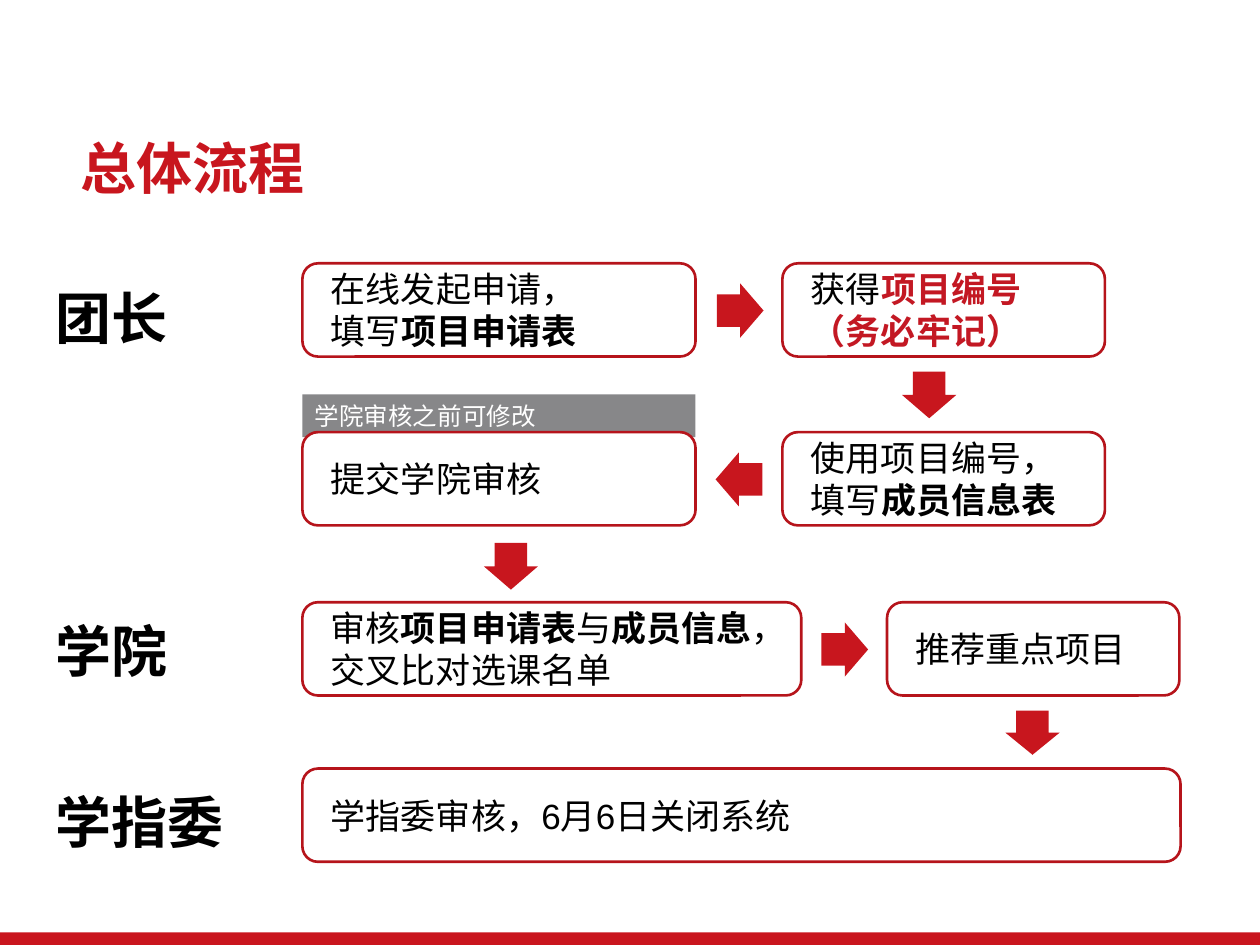
from lxml import etree
from pptx import Presentation
from pptx.dml.color import RGBColor
from pptx.enum.shapes import MSO_SHAPE
from pptx.enum.text import MSO_ANCHOR, PP_ALIGN
from pptx.oxml.ns import qn
from pptx.util import Inches, Pt

RECTANGLE = MSO_SHAPE.RECTANGLE
ROUNDED = MSO_SHAPE.ROUNDED_RECTANGLE
RIGHT = MSO_SHAPE.RIGHT_ARROW
LEFT = MSO_SHAPE.LEFT_ARROW
DOWN = MSO_SHAPE.DOWN_ARROW
TOP = MSO_ANCHOR.TOP
MIDDLE = MSO_ANCHOR.MIDDLE
ALIGN_LEFT = PP_ALIGN.LEFT

WHITE = RGBColor(0xFF, 0xFF, 0xFF)
BLACK = RGBColor(0x00, 0x00, 0x00)
GRAY = RGBColor(0x87, 0x87, 0x89)
BAR_RED = RGBColor(0xC9, 0x15, 0x1E)
RED = RGBColor(0xC8, 0x16, 0x1E)
BORDER_RED = RGBColor(0xB6, 0x14, 0x1B)
ACCENT_RED = RGBColor(0xC3, 0x18, 0x23)

BODY_FONT = "Arial"
TITLE_FONT = "Noto Sans CJK SC"

COLUMN_LEFT = 2.4
SECOND_LEFT = 6.21
BOX_HEIGHT = 0.74
ROWS = (2.09, 3.43, 4.78, 6.1)
ARROW_LENGTH = 0.37
ARROW_BREADTH = 0.43


def write_runs(paragraph, runs, size, font_name=BODY_FONT):
    paragraph.alignment = ALIGN_LEFT
    for text, bold, color in runs:
        run = paragraph.add_run()
        run.text = text
        run.font.size = Pt(size)
        run.font.bold = bold
        run.font.name = font_name
        run.font.color.rgb = color
        east_asian = etree.SubElement(run.font._element, qn("a:ea"))
        east_asian.set("typeface", font_name)


def add_filled_shape(slide, kind, box, fill):
    shape = slide.shapes.add_shape(kind, *map(Inches, box))
    shape.shadow.inherit = False
    shape.fill.solid()
    shape.fill.fore_color.rgb = fill
    shape.line.fill.background()
    return shape


def add_heading(slide, box, text, size, color, font_name, wrap):
    text_frame = slide.shapes.add_textbox(*map(Inches, box)).text_frame
    text_frame.word_wrap = wrap
    paragraph = text_frame.paragraphs[0]
    write_runs(paragraph, [(text, True, color)], size, font_name)
    return paragraph


def add_step(slide, box, *lines):
    shape = add_filled_shape(slide, ROUNDED, box, WHITE)
    shape.line.color.rgb = BORDER_RED
    shape.line.width = Pt(1.5)
    text_frame = shape.text_frame
    text_frame.word_wrap = True
    text_frame.vertical_anchor = MIDDLE
    text_frame.margin_left = text_frame.margin_right = Inches(0.19)
    text_frame.margin_top = text_frame.margin_bottom = Inches(0.19)
    for index, runs in enumerate(lines):
        paragraph = text_frame.add_paragraph() if index else text_frame.paragraphs[0]
        write_runs(paragraph, runs, 20)


def add_arrow(slide, kind, left, top, length=ARROW_LENGTH):
    if kind == DOWN:
        box = (left, top, ARROW_BREADTH, length)
    else:
        box = (left, top, length, ARROW_BREADTH)
    arrow = add_filled_shape(slide, kind, box, RED)
    arrow.adjustments[0] = 0.6
    arrow.adjustments[1] = 0.5


def add_note(slide, box, text):
    note = add_filled_shape(slide, RECTANGLE, box, GRAY)
    note.text_frame.word_wrap = True
    note.text_frame.vertical_anchor = TOP
    write_runs(note.text_frame.paragraphs[0], [(text, False, WHITE)], 14)


def add_leader_flow(slide, left, first_row, second_row):
    add_note(slide, (left, 3.13, 3.12, 0.34), "学院审核之前可修改")
    add_step(
        slide, (left, first_row, 3.12, BOX_HEIGHT),
        [("在线发起申请，", False, BLACK)],
        [("填写", False, BLACK), ("项目申请表", True, BLACK)],
    )
    add_arrow(slide, RIGHT, 5.69, 2.25)
    add_step(
        slide, (SECOND_LEFT, first_row, 2.56, BOX_HEIGHT),
        [("获得", False, BLACK), ("项目编号（务必牢记）", True, ACCENT_RED)],
    )
    add_arrow(slide, DOWN, 7.16, 2.95)
    add_step(
        slide, (SECOND_LEFT, second_row, 2.56, BOX_HEIGHT),
        [("使用项目编号，填写", False, BLACK), ("成员信息表", True, BLACK)],
    )
    add_arrow(slide, LEFT, 5.68, 3.59)
    add_step(
        slide, (left, second_row, 3.12, BOX_HEIGHT),
        [("提交学院审核", False, BLACK)],
    )
    add_arrow(slide, DOWN, 3.84, 4.31)


def add_college_flow(slide, left, row):
    add_step(
        slide, (left, row, 3.96, BOX_HEIGHT),
        [
            ("审核", False, BLACK), ("项目申请表", True, BLACK),
            ("与", False, BLACK), ("成员信息", True, BLACK),
            ("，交叉比对选课名单", False, BLACK),
        ],
    )
    add_arrow(slide, RIGHT, 6.52, 4.94)
    add_step(
        slide, (7.04, row, 2.32, BOX_HEIGHT),
        [("推荐重点项目", False, BLACK)],
    )
    add_arrow(slide, DOWN, 7.98, 5.64, 0.35)


def add_committee_flow(slide, left, row):
    add_step(
        slide, (left, row, 6.97, BOX_HEIGHT),
        [("学指委审核，6月6日关闭系统", False, BLACK)],
    )


def main():
    presentation = Presentation()
    presentation.slide_width = Inches(10)
    presentation.slide_height = Inches(7.5)
    slide = presentation.slides.add_slide(presentation.slide_layouts[6])

    add_filled_shape(slide, RECTANGLE, (0, 7.4, 10, 0.1), BAR_RED)
    title = add_heading(
        slide, (0.54, 1.07, 9.16, 0.63), "总体流程", 32, RED, TITLE_FONT, True
    )
    title.line_spacing = 0.9
    for text, top, width in (
        ("团长", 2.2, 1.1), ("学院", 4.84, 1.1), ("学指委", 6.2, 1.55)
    ):
        add_heading(
            slide, (0.34, top, width, 0.64), text, 32, BLACK, BODY_FONT, False
        )
    add_leader_flow(slide, COLUMN_LEFT, ROWS[0], ROWS[1])
    add_college_flow(slide, COLUMN_LEFT, ROWS[2])
    add_committee_flow(slide, COLUMN_LEFT, ROWS[3])
    presentation.save("out.pptx")


if __name__ == "__main__":
    main()
